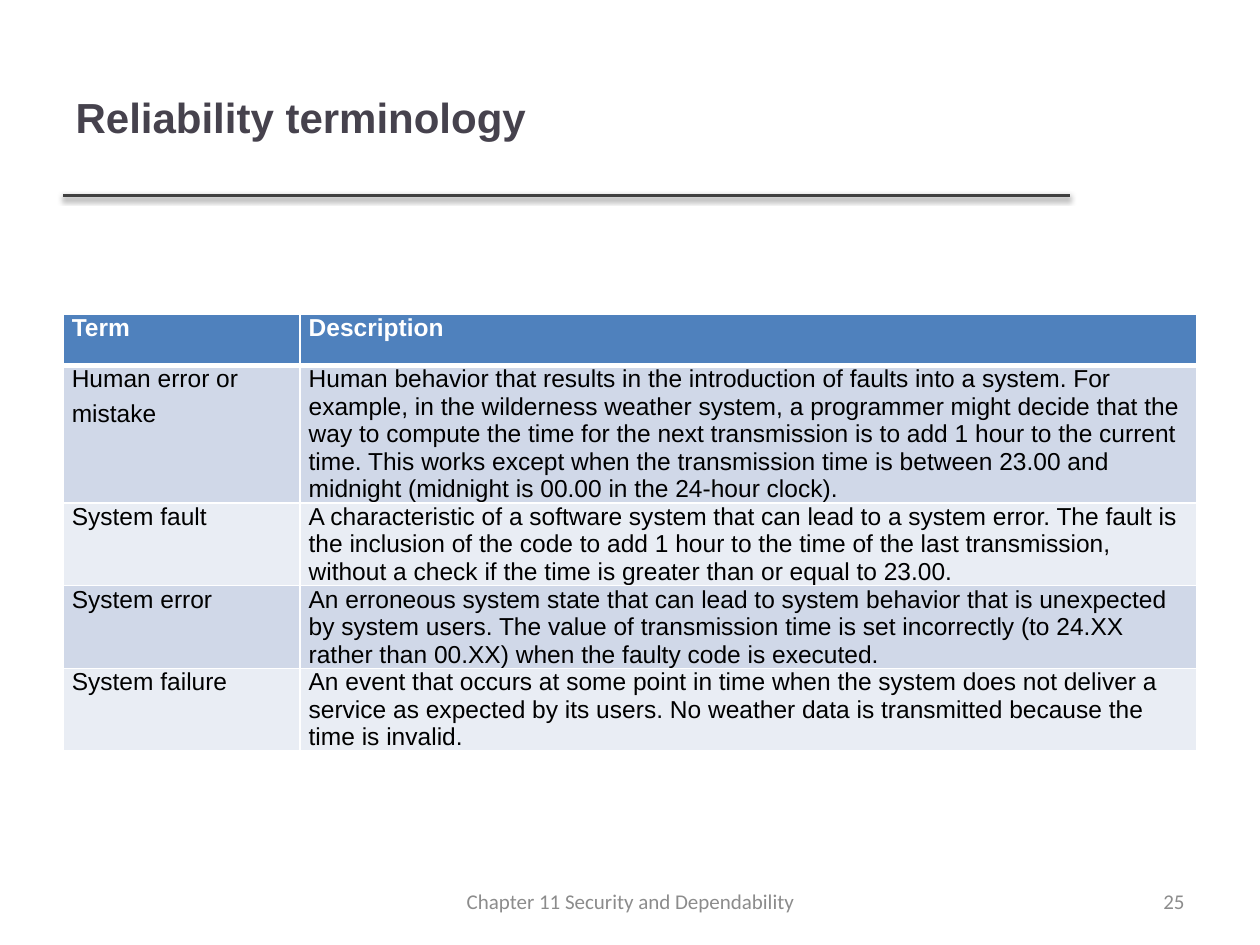
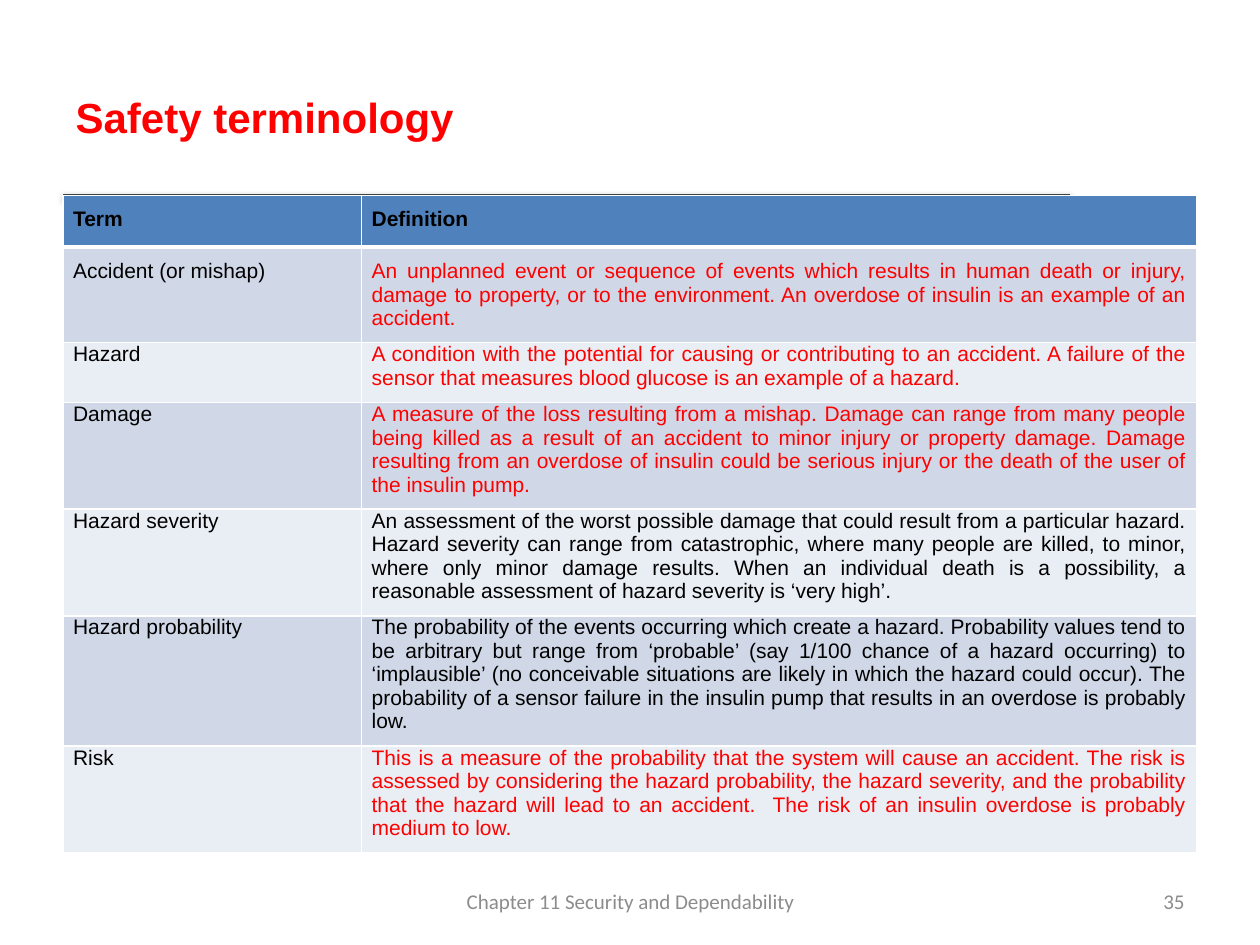
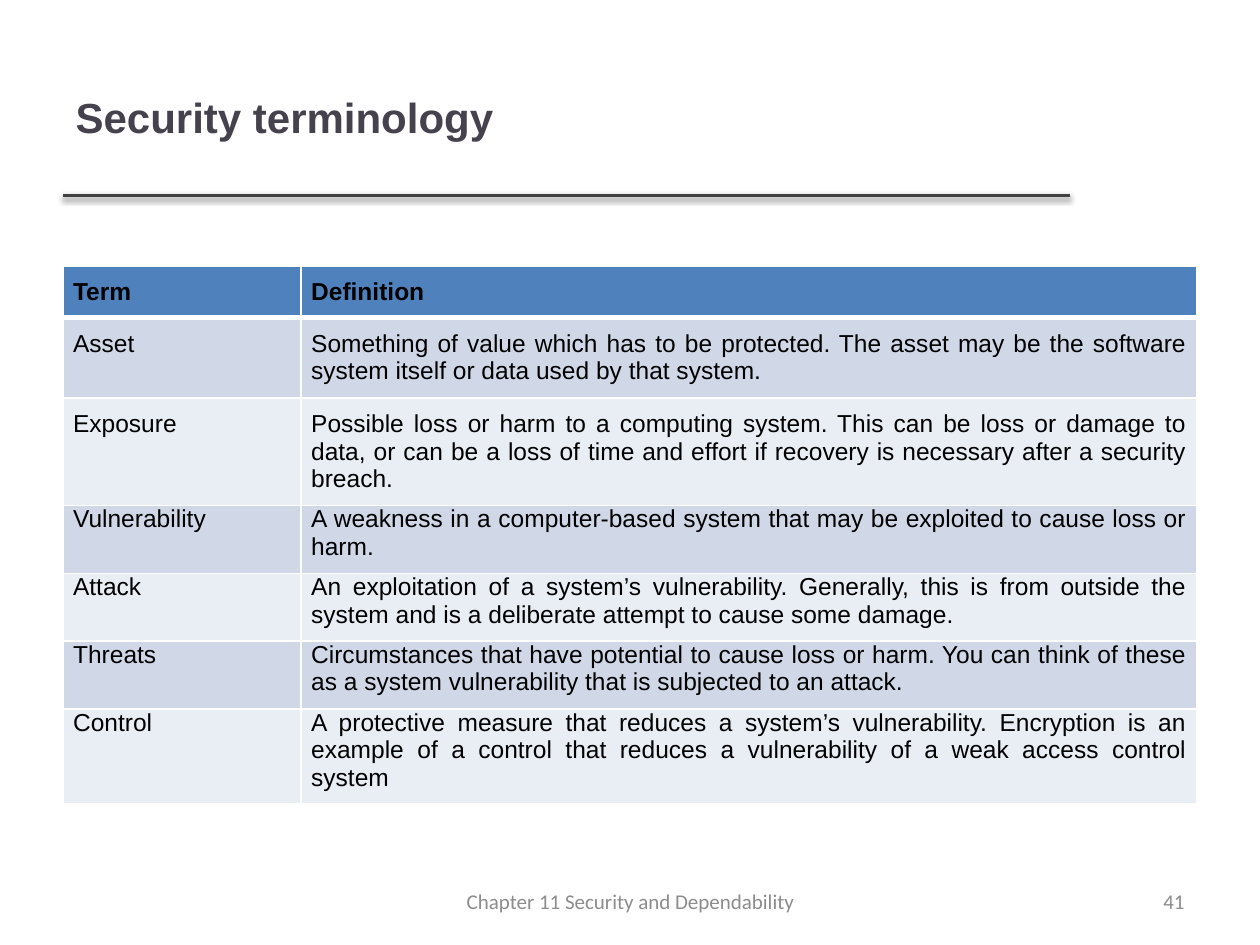
from lxml import etree
from pptx import Presentation
from pptx.dml.color import RGBColor
from pptx.enum import shapes, text
from pptx.oxml import ns
from pptx.util import Inches, Pt

WHITE, BLACK, RED = "FFFFFF", "000000", "FF0000"
TITLE, RULE, GREY = "46424D", "404040", "8C8C8C"
HEADER, BANDS = "4F81BD", ("D0D8E8", "E9EDF4")
LEFT, RULE_TOP, TABLE_WIDTH, ROW_HEIGHT = 0.5, 1.55, 9, 0.41
FOOTER_TOP, FOOTER_HEIGHT = 6.95, 0.4
FOOTER = "Chapter 11 Security and Dependability"
ALIGN, ANCHOR = text.PP_ALIGN, text.MSO_ANCHOR


def color(value):
    return RGBColor.from_string(value)


def add_element(parent, tag, **attributes):
    return etree.SubElement(parent, ns.qn(tag), attributes)


def add_border(cell, side, width):
    """Add a white border; side is L, R, T or B."""
    properties = cell._tc.get_or_add_tcPr()
    line = add_element(properties, f"a:ln{side}", w=str(Pt(width)))
    add_element(add_element(line, "a:solidFill"), "a:srgbClr", val=WHITE)


class TermDeck:
    def __init__(self):
        self.deck = Presentation()
        self.deck.slide_width, self.deck.slide_height = Inches(10), Inches(7.5)
        self.page = None

    def fill_text(self, frame, words, size, ink, font="Arial", bold=False,
                  align=ALIGN.LEFT, space_after=0):
        """Fill a text frame, one paragraph for each line of words."""
        for index, line in enumerate(words.split("\n")):
            para = frame.add_paragraph() if index else frame.paragraphs[0]
            para.alignment = align
            if space_after:
                para.space_after = Pt(space_after)
            span = para.add_run()
            span.text = line
            span.font.name, span.font.size, span.font.bold = font, Pt(size), bold
            span.font.color.rgb = color(ink)

    def start_page(self, title, ink=TITLE):
        self.page = self.deck.slides.add_slide(self.deck.slide_layouts[5])
        self.rule()
        box = self.page.shapes.title
        box.left, box.top = Inches(LEFT), Inches(0.3)
        box.width, box.height = Inches(7.98), Inches(1.25)
        box.text_frame.vertical_anchor = ANCHOR.MIDDLE
        self.fill_text(box.text_frame, title, 24, ink, bold=True)

    def rule(self):
        line = self.page.shapes.add_connector(
            shapes.MSO_CONNECTOR.STRAIGHT, Inches(LEFT), Inches(RULE_TOP),
            Inches(8.49), Inches(RULE_TOP))
        line.line.width = Pt(2)
        line.line.color.rgb = color(RULE)
        effects = add_element(line._element.spPr, "a:effectLst")
        shadow = add_element(effects, "a:outerShdw", blurRad=str(Pt(3.1)),
                             dist=str(Pt(1.6)), dir="5400000", rotWithShape="0")
        ink = add_element(shadow, "a:srgbClr", val=BLACK)
        add_element(ink, "a:alpha", val="38000")

    def term_table(self, top, term_width, rows, size=14, header_ink=BLACK,
                   side=0.08, padding=0.1, padded_rows=2, align=ALIGN.JUSTIFY,
                   space_after=0, red_terms=()):
        """Add a two-column table; the first padded_rows have a top inset."""
        frame = self.page.shapes.add_table(
            len(rows), 2, Inches(LEFT), Inches(top), Inches(TABLE_WIDTH),
            Inches(ROW_HEIGHT * len(rows)))
        table = frame.table
        table.columns[0].width = Inches(term_width)
        table.columns[1].width = Inches(TABLE_WIDTH - term_width)
        for row, entry in enumerate(rows):
            table.rows[row].height = Inches(ROW_HEIGHT)
            is_header = row == 0
            for column, words in enumerate(entry):
                cell = table.cell(row, column)
                cell.margin_left = cell.margin_right = Inches(side)
                cell.margin_top = Inches(padding if row < padded_rows else 0)
                cell.margin_bottom = Inches(0 if is_header else padding)
                add_border(cell, "L", 1)
                add_border(cell, "R", 1)
                if is_header:
                    add_border(cell, "T", 1)
                add_border(cell, "B", 3 if is_header else 1)
                cell.fill.solid()
                cell.fill.fore_color.rgb = color(
                    HEADER if is_header else BANDS[(row - 1) % 2])
                ink = header_ink if is_header else BLACK
                if column == 1 and entry[0] in red_terms:
                    ink = RED
                self.fill_text(cell.text_frame, words, size, ink, bold=is_header,
                               align=align,
                               space_after=0 if is_header else space_after)

    def footer_text(self, left, width, words, align):
        box = self.page.shapes.add_textbox(
            Inches(left), Inches(FOOTER_TOP), Inches(width), Inches(FOOTER_HEIGHT))
        box.text_frame.word_wrap = True
        box.text_frame.vertical_anchor = ANCHOR.MIDDLE
        self.fill_text(box.text_frame, words, 12, GREY, font="Calibri", align=align)

    def footer(self, number):
        self.footer_text(7.17, 2.33, str(number), ALIGN.RIGHT)
        self.footer_text(3.42, 3.17, FOOTER, ALIGN.CENTER)


RELIABILITY = [
    ("Term", "Description"),
    ("Human error or\nmistake",
     "Human behavior that results in the introduction of faults into a system. "
     "For example, in the wilderness weather system, a programmer might decide "
     "that the way to compute the time for the next transmission is to add 1 hour "
     "to the current time. This works except when the transmission time is between "
     "23.00 and midnight (midnight is 00.00 in the 24-hour clock)."),
    ("System fault",
     "A characteristic of a software system that can lead to a system error. The "
     "fault is the inclusion of the code to add 1 hour to the time of the last "
     "transmission, without a check if the time is greater than or equal to 23.00."),
    ("System error",
     "An erroneous system state that can lead to system behavior that is "
     "unexpected by system users. The value of transmission time is set "
     "incorrectly (to 24.XX rather than 00.XX) when the faulty code is executed."),
    ("System failure",
     "An event that occurs at some point in time when the system does not deliver "
     "a service as expected by its users. No weather data is transmitted because "
     "the time is invalid."),
]
SAFETY = [
    ("Term", "Definition"),
    ("Accident (or mishap)",
     "An unplanned event or sequence of events which results in human death or "
     "injury, damage to property, or to the environment. An overdose of insulin "
     "is an example of an accident."),
    ("Hazard",
     "A condition with the potential for causing or contributing to an accident. "
     "A failure of the sensor that measures blood glucose is an example of a "
     "hazard."),
    ("Damage",
     "A measure of the loss resulting from a mishap. Damage can range from many "
     "people being killed as a result of an accident to minor injury or property "
     "damage. Damage resulting from an overdose of insulin could be serious injury "
     "or the death of the user of the insulin pump."),
    ("Hazard severity",
     "An assessment of the worst possible damage that could result from a "
     "particular hazard. Hazard severity can range from catastrophic, where many "
     "people are killed, to minor, where only minor damage results. When an "
     "individual death is a possibility, a reasonable assessment of hazard "
     "severity is ‘very high’."),
    ("Hazard probability",
     "The probability of the events occurring which create a hazard. Probability "
     "values tend to be arbitrary but range from ‘probable’ (say 1/100 chance of a "
     "hazard occurring) to ‘implausible’ (no conceivable situations are likely in "
     "which the hazard could occur). The probability of a sensor failure in the "
     "insulin pump that results in an overdose is probably low."),
    ("Risk",
     "This is a measure of the probability that the system will cause an accident. "
     "The risk is assessed by considering the hazard probability, the hazard "
     "severity, and the probability that the hazard will lead to an accident.  The "
     "risk of an insulin overdose is probably medium to low."),
]
SECURITY = [
    ("Term", "Definition"),
    ("Asset",
     "Something of value which has to be protected. The asset may be the software "
     "system itself or data used by that system."),
    ("Exposure",
     "Possible loss or harm to a computing system. This can be loss or damage to "
     "data, or can be a loss of time and effort if recovery is necessary after a "
     "security breach."),
    ("Vulnerability",
     "A weakness in a computer-based system that may be exploited to cause loss or "
     "harm."),
    ("Attack",
     "An exploitation of a system’s vulnerability. Generally, this is from outside "
     "the system and is a deliberate attempt to cause some damage."),
    ("Threats",
     "Circumstances that have potential to cause loss or harm. You can think of "
     "these as a system vulnerability that is subjected to an attack."),
    ("Control",
     "A protective measure that reduces a system’s vulnerability. Encryption is an "
     "example of a control that reduces a vulnerability of a weak access control "
     "system"),
]


def main():
    terms = TermDeck()

    terms.start_page("Reliability terminology")
    terms.term_table(2.49, 1.88, RELIABILITY, header_ink=WHITE, side=0.07,
                     padding=0, align=ALIGN.LEFT, space_after=4)
    terms.footer(25)

    terms.start_page("Safety terminology", RED)
    terms.term_table(1.55, 2.37, SAFETY, size=12,
                     red_terms=("Accident (or mishap)", "Hazard", "Damage", "Risk"))
    terms.footer(35)

    terms.start_page("Security terminology")
    terms.term_table(2.11, 1.89, SECURITY, padded_rows=3)
    terms.footer(41)

    terms.deck.save("out.pptx")


if __name__ == "__main__":
    main()
